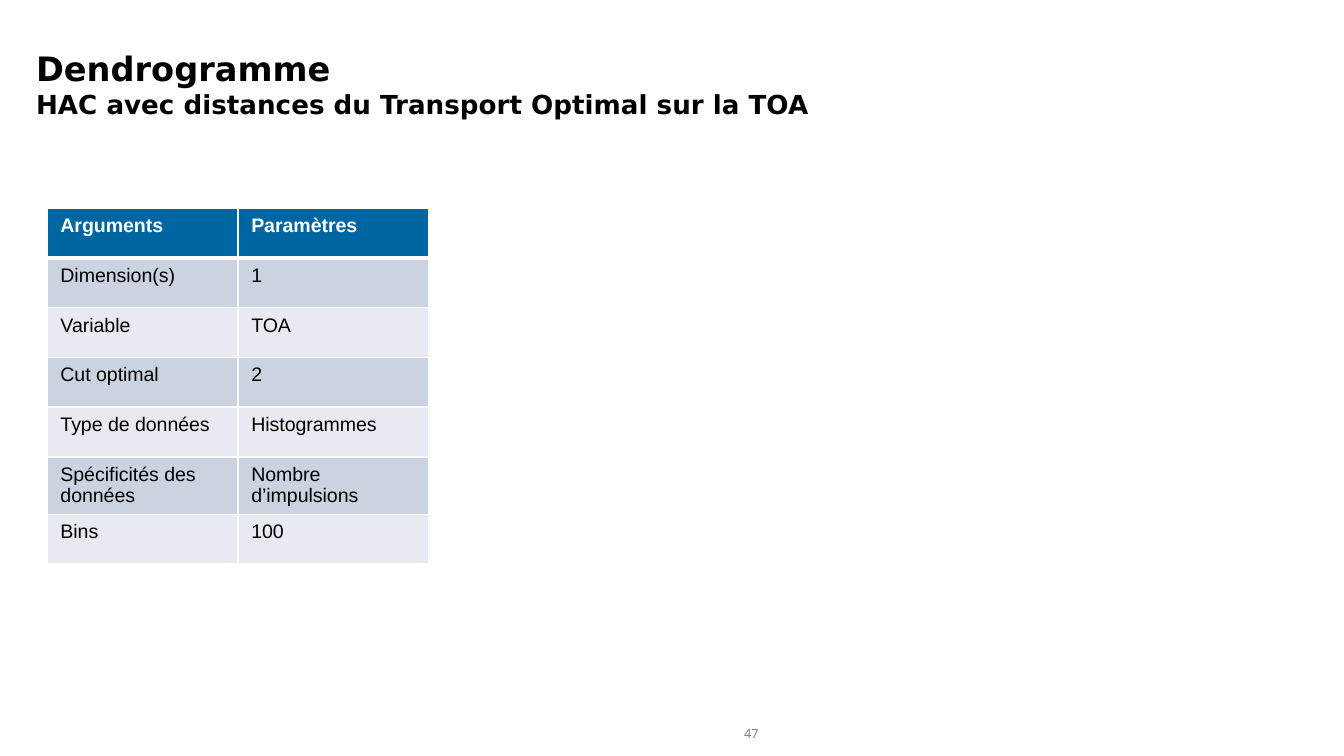
from lxml import etree
from pptx import Presentation
from pptx import util as u
from pptx.dml.color import RGBColor
from pptx.enum import text
from pptx.oxml import ns


def color(value):
    return RGBColor.from_string(value)


def set_borders(cell, top_width, bottom_width):
    """Draw white borders, 1 pt wide at the sides."""
    properties = cell._tc.get_or_add_tcPr()
    widths = {"a:lnL": 1, "a:lnR": 1, "a:lnT": top_width, "a:lnB": bottom_width}
    for position, (tag, width) in enumerate(widths.items()):
        line = etree.Element(ns.qn(tag), w=str(u.Pt(width)))
        fill = etree.SubElement(line, ns.qn("a:solidFill"))
        etree.SubElement(fill, ns.qn("a:srgbClr"), val="FFFFFF")
        properties.insert(position, line)


presentation = Presentation()
presentation.slide_width = u.Inches(10)
presentation.slide_height = u.Inches(10 * 9 / 16)
slide = presentation.slides.add_slide(presentation.slide_layouts[6])

# Slide number
number_box = slide.shapes.add_textbox(
    u.Inches(5.25), u.Inches(5.36), u.Inches(0.68), u.Inches(0.2))
frame = number_box.text_frame
frame.word_wrap = True
frame.vertical_anchor = text.MSO_ANCHOR.MIDDLE
frame.margin_left = frame.margin_right = u.Inches(0.08)
frame.margin_top = frame.margin_bottom = u.Inches(0.04)
paragraph = frame.paragraphs[0]
paragraph.text = "47"
paragraph.alignment = text.PP_ALIGN.CENTER
paragraph.font.size = u.Pt(6.8)
paragraph.font.name = "Noto Sans"
paragraph.font.color.rgb = color("818181")

# Title and subtitle
title_box = slide.shapes.add_textbox(
    u.Inches(0.17), u.Inches(0.31), u.Inches(7.59), u.Inches(0.62))
frame = title_box.text_frame
frame.word_wrap = True
paragraph = frame.paragraphs[0]
paragraph.font.name = "DejaVu Sans"
paragraph.font.bold = True
paragraph.font.color.rgb = color("000000")
title = paragraph.add_run()
title.text = "Dendrogramme"
title.font.size = u.Pt(18)
paragraph.add_line_break()
subtitle = paragraph.add_run()
subtitle.text = "HAC avec distances du Transport Optimal sur la TOA"
subtitle.font.size = u.Pt(14)

# Parameter table
rows = [
    ("Arguments", "Paramètres"),
    ("Dimension(s)", "1"),
    ("Variable", "TOA"),
    ("Cut optimal", "2"),
    ("Type de données", "Histogrammes"),
    ("Spécificités des données", "Nombre d’impulsions"),
    ("Bins", "100"),
]
row_height = 0.37
column_width = 1.42
table = slide.shapes.add_table(
    len(rows), 2, u.Inches(0.35), u.Inches(1.55),
    u.Inches(column_width * 2), u.Inches(row_height * len(rows))).table

for row_index, row in enumerate(rows):
    table.rows[row_index].height = u.Inches(row_height)
    header = row_index == 0
    band = "CCD3E0" if row_index % 2 else "E7EAF0"
    for column_index, label in enumerate(row):
        cell = table.cell(row_index, column_index)
        cell.margin_bottom = u.Inches(0.03)
        cell.fill.solid()
        cell.fill.fore_color.rgb = color("0066A1" if header else band)
        set_borders(cell, top_width=3 if row_index == 1 else 1,
                    bottom_width=3 if header else 1)
        paragraph = cell.text_frame.paragraphs[0]
        paragraph.text = label
        paragraph.font.size = u.Pt(10.5)
        paragraph.font.name = "Arial"
        paragraph.font.bold = header
        paragraph.font.color.rgb = color("FFFFFF" if header else "000000")

presentation.save("out.pptx")
